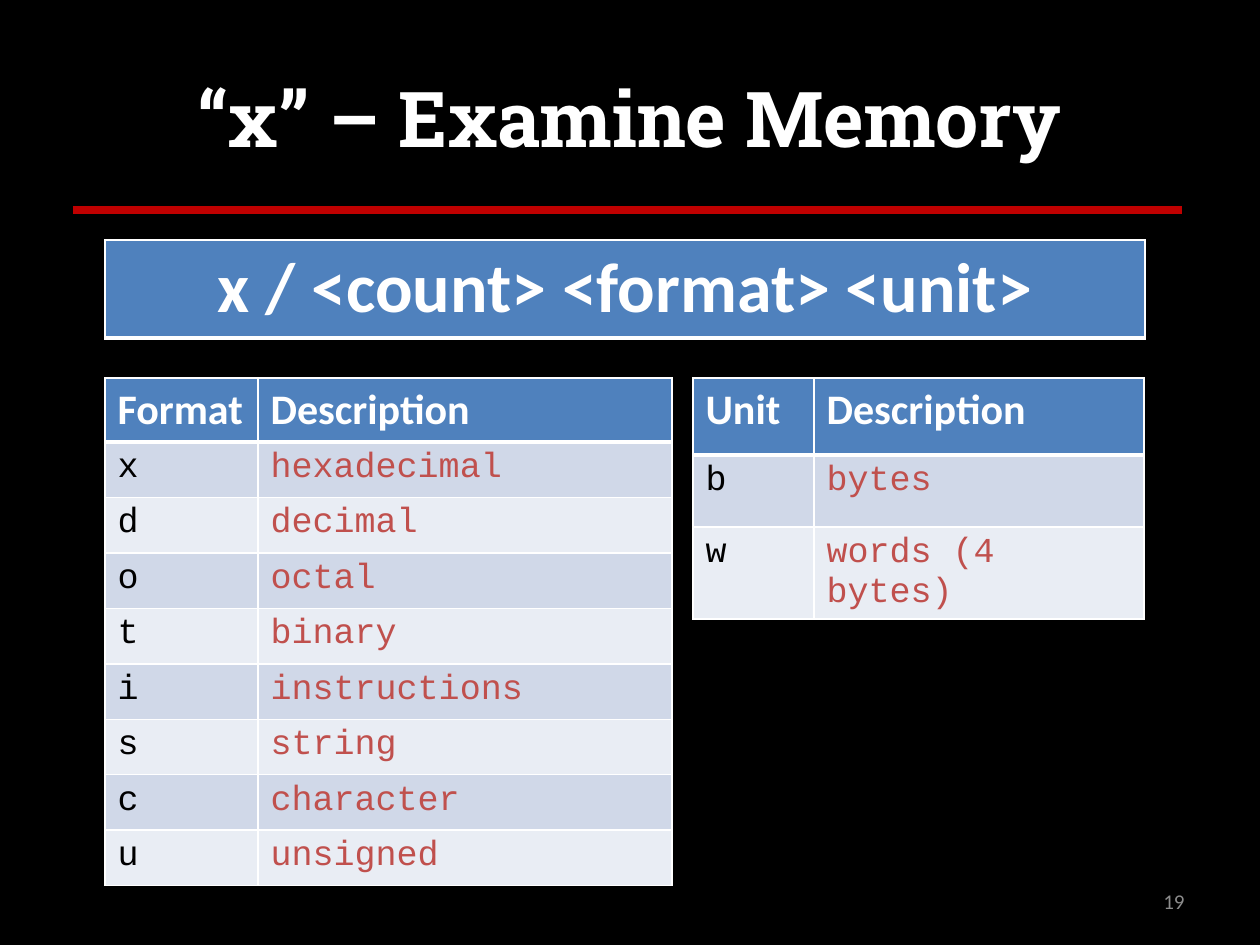
from lxml import etree
from pptx import Presentation
from pptx.dml.color import RGBColor
from pptx.enum.shapes import MSO_CONNECTOR
from pptx.enum.text import MSO_ANCHOR, PP_ALIGN
from pptx.oxml.ns import qn
from pptx.util import Emu, Pt

LEFT, CENTER, RIGHT = PP_ALIGN.LEFT, PP_ALIGN.CENTER, PP_ALIGN.RIGHT
MIDDLE = MSO_ANCHOR.MIDDLE
STRAIGHT = MSO_CONNECTOR.STRAIGHT

PIXELS_PER_INCH = 126
TITLE_ONLY = 5
BLACK, WHITE, RED, GREY = "000000", "FFFFFF", "C00000", "8C8C8C"
HEADER_FILL, DESCRIPTION_COLOR = "4F81BD", "C0504D"
BAND_FILLS = ("D0D8E8", "E9EDF4")

FORMATS = [
    ("x", "hexadecimal"),
    ("d", "decimal"),
    ("o", "octal"),
    ("t", "binary"),
    ("i", "instructions"),
    ("s", "string"),
    ("c", "character"),
    ("u", "unsigned"),
]
UNITS = [("b", "bytes"), ("w", "words (4 bytes)")]


def px(length):
    return Emu(round(length * 914400 / PIXELS_PER_INCH))


def color(value):
    return RGBColor.from_string(value)


def write(text_frame, text, font_name, size, text_color, bold=False, align=LEFT):
    paragraph = text_frame.paragraphs[0]
    paragraph.text = text
    paragraph.alignment = align
    font = paragraph.font
    font.name = font_name
    font.size = Pt(size)
    font.bold = bold
    font.color.rgb = color(text_color)


def add_border(cell, side, width):
    properties = cell._tc.get_or_add_tcPr()
    line = etree.SubElement(properties, qn(f"a:ln{side}"), w=str(Pt(width)))
    fill = etree.SubElement(line, qn("a:solidFill"))
    etree.SubElement(fill, qn("a:srgbClr"), val=WHITE)


def format_cell(cell, fill_color, top=1, bottom=1):
    for side, width in (("L", 1), ("R", 1), ("T", top), ("B", bottom)):
        add_border(cell, side, width)
    cell.fill.solid()
    cell.fill.fore_color.rgb = color(fill_color)


def add_table(slide, left, top, column_widths, header_height, headers,
              header_size=24, align=LEFT, body=(), body_height=0):
    shape = slide.shapes.add_table(
        len(body) + 1, len(headers), px(left), px(top),
        px(sum(column_widths)), px(header_height + body_height))
    table = shape.table
    for column, width in zip(table.columns, column_widths):
        column.width = px(width)
    table.rows[0].height = px(header_height)
    for column_index, header in enumerate(headers):
        cell = table.cell(0, column_index)
        format_cell(cell, HEADER_FILL, bottom=3)
        write(cell.text_frame, header, "Calibri", header_size, WHITE, True, align)
    for row_index, texts in enumerate(body, 1):
        table.rows[row_index].height = px(body_height / len(body))
        fill_color = BAND_FILLS[(row_index - 1) % 2]
        for column_index, text in enumerate(texts):
            cell = table.cell(row_index, column_index)
            format_cell(cell, fill_color, top=3 if row_index == 1 else 1)
            text_color = DESCRIPTION_COLOR if column_index else BLACK
            write(cell.text_frame, text, "Courier New", 20, text_color)


def add_title(slide, text):
    title = slide.shapes.title
    title.left, title.top, title.width, title.height = map(px, (63, 38, 1134, 157))
    title.text_frame.vertical_anchor = MIDDLE
    write(title.text_frame, text, "Roboto Slab", 44, WHITE, True, CENTER)


def add_rule(slide, left, right, y):
    rule = slide.shapes.add_connector(STRAIGHT, px(left), px(y), px(right), px(y))
    rule.line.color.rgb = color(RED)
    rule.line.width = Pt(5)
    etree.SubElement(rule._element.spPr, qn("a:effectLst"))


def add_slide_number(slide, text):
    box = slide.shapes.add_textbox(px(903), px(876), px(294), px(50))
    box.text_frame.word_wrap = True
    box.text_frame.vertical_anchor = MIDDLE
    write(box.text_frame, text, "Calibri", 12, GREY, align=RIGHT)


def main():
    presentation = Presentation()
    presentation.slide_width = px(1260)
    presentation.slide_height = px(945)
    slide = presentation.slides.add_slide(presentation.slide_layouts[TITLE_ONLY])
    slide.background.fill.solid()
    slide.background.fill.fore_color.rgb = color(BLACK)

    add_title(slide, "“x” – Examine Memory")
    add_rule(slide, 73, 1182, 210)
    add_table(slide, 105, 240, (1040,), 97, ("x / <count> <format> <unit>",),
              header_size=40, align=CENTER)
    add_table(slide, 105, 378, (153, 414), 64, ("Format", "Description"),
              body=FORMATS, body_height=444)
    add_table(slide, 693, 378, (121, 330), 77, ("Unit", "Description"),
              body=UNITS, body_height=144)
    add_slide_number(slide, "19")
    presentation.save("out.pptx")


if __name__ == "__main__":
    main()
